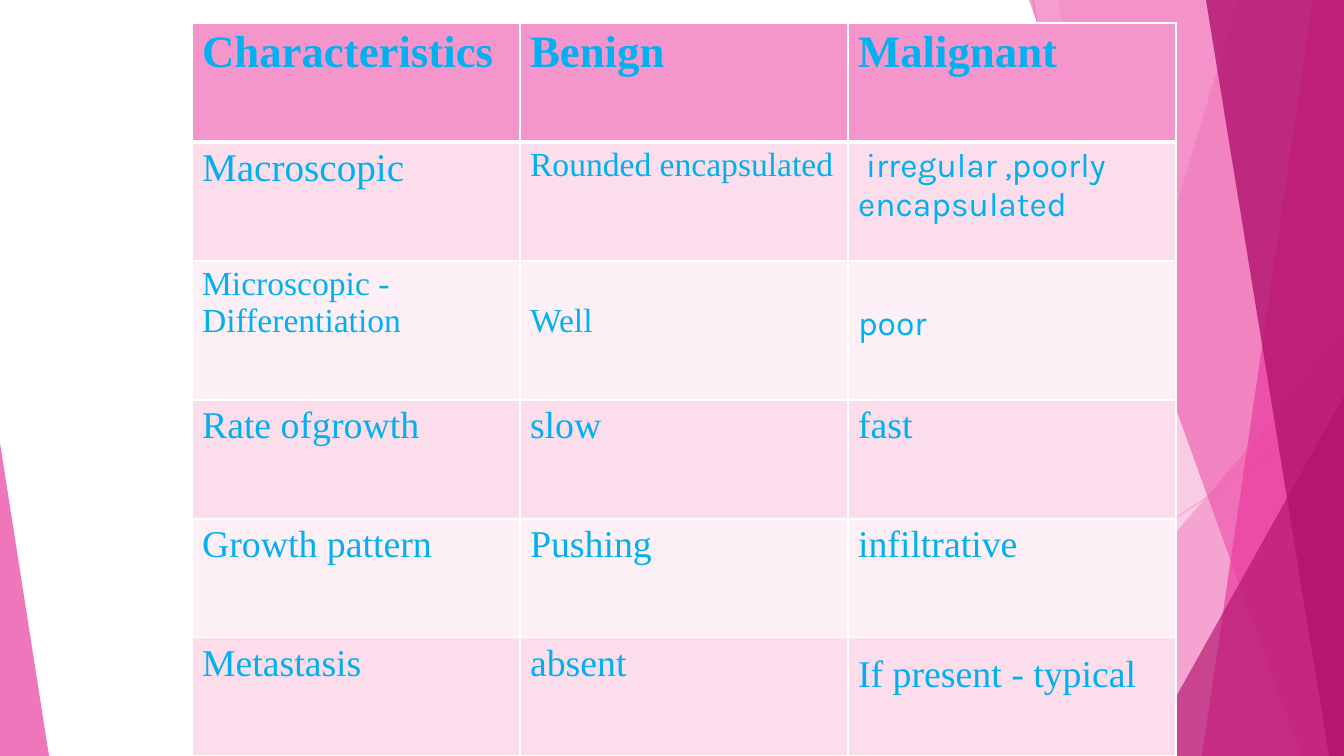
from pptx import Presentation
from pptx.dml.color import RGBColor
from pptx.enum.shapes import MSO_CONNECTOR, MSO_SHAPE
from pptx.oxml.ns import qn
from pptx.util import Pt
from lxml.etree import SubElement

SCALE = 914400 / 100.8
WIDTH, HEIGHT = 1344, 756

WHITE = RGBColor(0xFF, 0xFF, 0xFF)
SKY = RGBColor(0x00, 0xB0, 0xF0)
PINK = RGBColor(0xF4, 0x96, 0xCB)
ROSE = RGBColor(0xEB, 0x3D, 0x9F)
MAGENTA = RGBColor(0xB2, 0x13, 0x6D)
BAND_DARK = RGBColor(0xFB, 0xDD, 0xEC)
BAND_LIGHT = RGBColor(0xFD, 0xEF, 0xF6)

SERIF, SANS = "Times New Roman", "Karla"

# Table content
ROWS = [
    ["Characteristics", "Benign", "Malignant"],
    ["Macroscopic", "Rounded encapsulated", " irregular ,poorly encapsulated"],
    ["Microscopic -\nDifferentiation", "Well", "poor"],
    ["Rate ofgrowth", "slow", "fast"],
    ["Growth pattern", "Pushing", "infiltrative"],
    ["Metastasis", "absent", "If present - typical"],
]
ROW_SIZES = [32, 24, 24, 27, 27, 27]
CELL_SIZES = {(1, 0): 28}
CELL_FONTS = {(1, 2): SANS, (2, 2): SANS}
CELL_DROPS = {(2, 1): 37, (2, 2): 39, (5, 2): 11}
ROW_HEIGHTS = [119, 119, 139, 119, 119, 118]
TABLE_LEFT, TABLE_TOP, COLUMN_WIDTH = 192, 23, 328
MARGIN_TOP = 5

# Backdrop, back to front: lines, then facets with opacity in percent
LINES = [(1033, 0, 1167, 756), (1344, 406, 818, 756)]
FACETS = [  # bands: top left x, bottom left x; triangles: left, top, width, apex
    ("band", (1238, 1012), PINK, 36),
    ("band", (1058, 1192), PINK, 20),
    ("triangle", (985, 336, 359, 1), PINK, 72),
    ("band", (1029, 1301), ROSE, 50),
    ("band", (1313, 1202), ROSE, 70),
    ("band", (1206, 1329), MAGENTA, 80),
    ("triangle", (1143, 396, 201, 1), MAGENTA, 66),
    ("triangle", (0, 443, 49, 0), ROSE, 70),
]


def px(length):
    return round(length * SCALE)


def set_opacity(element, percent):
    color = next(element.iter(qn("a:srgbClr")))
    SubElement(color, qn("a:alpha"), val=str(percent * 1000))


def add_line(page, ends):
    line = page.shapes.add_connector(MSO_CONNECTOR.STRAIGHT, *map(px, ends))
    line.line.color.rgb = PINK
    line.line.width = Pt(0.75)
    properties = line._element.spPr
    set_opacity(properties, 70)
    SubElement(properties, qn("a:effectLst"))


def add_facet(page, kind, place, color, opacity):
    if kind == "band":
        top_x, bottom_x = place
        builder = page.shapes.build_freeform(top_x, 0, scale=SCALE)
        builder.add_line_segments([(WIDTH, 0), (WIDTH, HEIGHT), (bottom_x, HEIGHT)])
        facet = builder.convert_to_shape()
    else:
        left, top, width, apex = place
        facet = page.shapes.add_shape(MSO_SHAPE.ISOSCELES_TRIANGLE, px(left), px(top),
                                      px(width), px(HEIGHT - top))
        facet.adjustments[0] = apex
    facet.shadow.inherit = False
    facet.fill.solid()
    facet.fill.fore_color.rgb = color
    set_opacity(facet._element.spPr, opacity)
    facet.line.fill.background()


def write(frame, text, *, size, font=SERIF, bold=False, color=SKY):
    frame.word_wrap = True
    for index, line in enumerate(text.split("\n")):
        para = frame.add_paragraph() if index else frame.paragraphs[0]
        span = para.add_run()
        span.text = line
        span.font.size = Pt(size)
        span.font.name = font
        span.font.bold = bold
        span.font.color.rgb = color


def set_borders(cell, bottom):
    properties = cell._tc.get_or_add_tcPr()
    for side, width in (("L", 1), ("R", 1), ("T", 1), ("B", bottom)):
        edge = SubElement(properties, qn("a:ln" + side), w=str(Pt(width)))
        fill = SubElement(edge, qn("a:solidFill"))
        SubElement(fill, qn("a:srgbClr"), val=str(WHITE))


def add_comparison(page):
    columns = len(ROWS[0])
    table = page.shapes.add_table(len(ROWS), columns, px(TABLE_LEFT), px(TABLE_TOP),
                                  px(COLUMN_WIDTH * columns), px(sum(ROW_HEIGHTS))).table
    for column in table.columns:
        column.width = px(COLUMN_WIDTH)
    for r, texts in enumerate(ROWS):
        table.rows[r].height = px(ROW_HEIGHTS[r])
        band = PINK if r == 0 else BAND_DARK if r % 2 else BAND_LIGHT
        for c, text in enumerate(texts):
            cell = table.cell(r, c)
            cell.margin_top = px(MARGIN_TOP + CELL_DROPS.get((r, c), 0))
            set_borders(cell, bottom=1 if r else 3)
            cell.fill.solid()
            cell.fill.fore_color.rgb = band
            write(cell.text_frame, text, size=CELL_SIZES.get((r, c), ROW_SIZES[r]),
                  font=CELL_FONTS.get((r, c), SERIF), bold=r == 0)


def main():
    deck = Presentation()
    deck.slide_width, deck.slide_height = px(WIDTH), px(HEIGHT)
    page = deck.slides.add_slide(deck.slide_layouts[6])
    # Backdrop
    for ends in LINES:
        add_line(page, ends)
    for facet in FACETS:
        add_facet(page, *facet)
    # Table
    add_comparison(page)
    deck.save("out.pptx")


if __name__ == "__main__":
    main()
